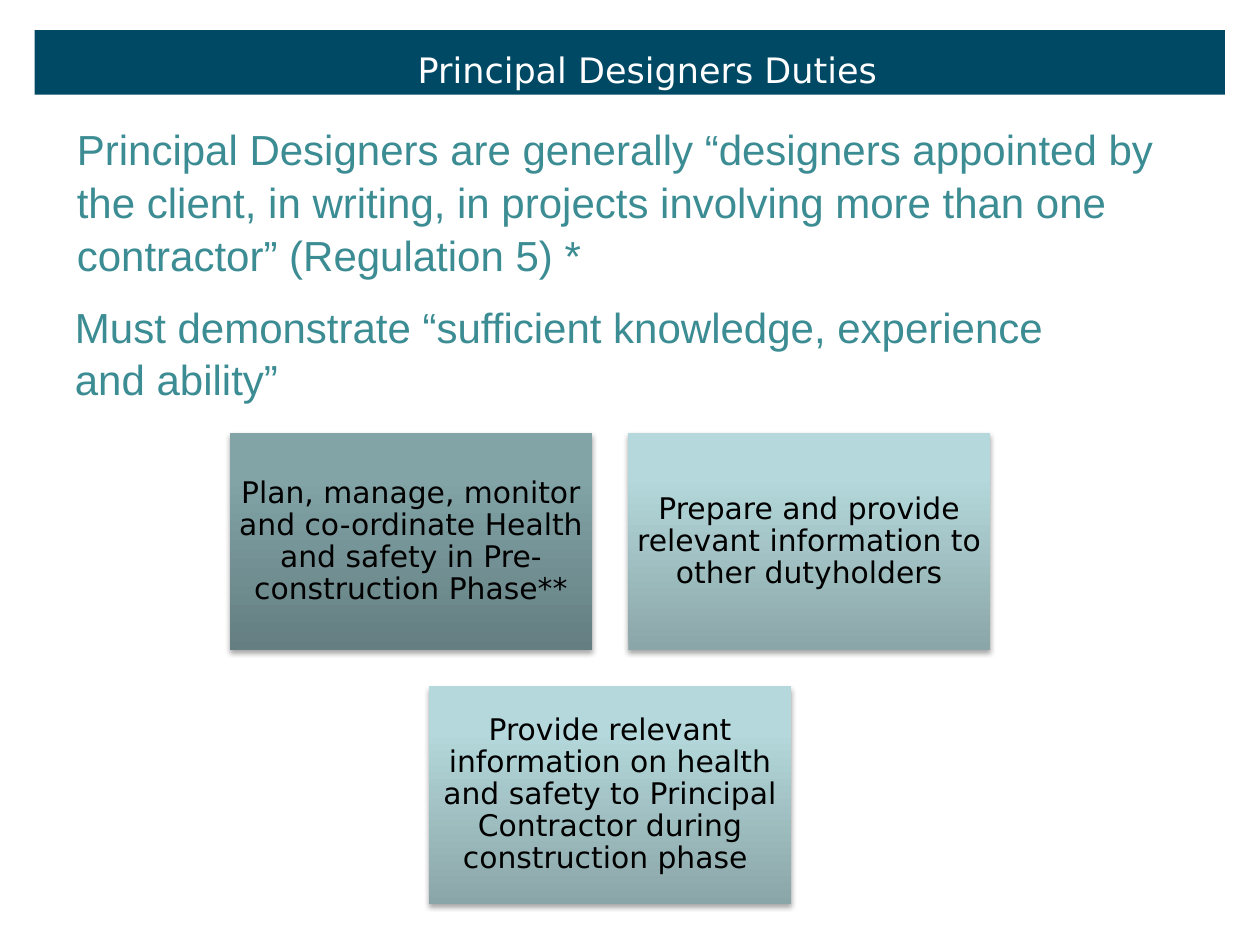
from lxml import etree
from pptx import Presentation
from pptx import util as u
from pptx.dml.color import RGBColor
from pptx.enum import shapes, text
from pptx.oxml import parse_xml
from pptx.oxml.ns import nsdecls, qn

NAVY = RGBColor(0x00, 0x49, 0x64)
TEAL = RGBColor(0x3C, 0x8C, 0x93)
WHITE = RGBColor(0xFF, 0xFF, 0xFF)
BLACK = RGBColor(0x00, 0x00, 0x00)
DARK_SHADES = [RGBColor(0x64, 0x7E, 0x81), RGBColor(0x82, 0xA4, 0xA7), RGBColor(0x82, 0xA6, 0xA9)]
LIGHT_SHADES = [RGBColor(0x8B, 0xA6, 0xA8), RGBColor(0xB4, 0xD8, 0xDB), RGBColor(0xB4, 0xD9, 0xDC)]
STOPS = (0, 80, 100)

CARD_WIDTH, CARD_HEIGHT, CARD_GAP = 206.8, 124.1, 20.7
CARDS_LEFT, CARDS_TOP = 131.5, 247.5
CARD_ROWS = [
    [("Plan, manage, monitor and co-ordinate Health and safety in Pre-construction Phase**", DARK_SHADES),
     ("Prepare and provide relevant information to other dutyholders", LIGHT_SHADES)],
    [("Provide relevant information on health and safety to Principal Contractor "
      "during construction phase ", LIGHT_SHADES)],
]


def place(box, left, top, width, height):
    box.left, box.top, box.width, box.height = map(u.Pt, (left, top, width, height))


def write(box, words, face, size, color, align, anchor, spacing):
    frame = box.text_frame
    frame.text = words
    frame.word_wrap = True
    frame.auto_size = text.MSO_AUTO_SIZE.NONE
    frame.vertical_anchor = anchor
    para = frame.paragraphs[0]
    para.alignment = align
    para.line_spacing = spacing
    para.space_before = u.Pt(0)
    para.font.name = face
    para.font.size = u.Pt(size)
    para.font.color.rgb = color


def add_band(page):
    band = page.shapes.add_shape(shapes.MSO_SHAPE.RECTANGLE, *map(u.Pt, (19.8, 17.3, 680.2, 36.8)))
    band.shadow.inherit = False
    band.fill.solid()
    band.fill.fore_color.rgb = NAVY
    band.line.fill.background()
    page.shapes._spTree.insert(2, band._element)


def fill_title(page, words):
    title = page.shapes.title
    place(title, 127.4, 10.8, 485.3, 43.9)
    write(title, words, "DejaVu Sans", 20, WHITE, text.PP_ALIGN.CENTER, text.MSO_ANCHOR.BOTTOM, 0.75)


def fill_body(body, words, left, top, width, height):
    place(body, left, top, width, height)
    write(body, words, "Arial", 24, TEAL, text.PP_ALIGN.LEFT, text.MSO_ANCHOR.TOP, 1.05)
    properties = body.text_frame.paragraphs[0]._p.get_or_add_pPr()
    properties.set("marL", "0")
    properties.set("indent", "0")
    bullet = etree.Element(qn("a:buNone"))
    properties.find(qn("a:defRPr")).addprevious(bullet)


def shade(card, colors):
    stops = "".join(
        f'<a:gs pos="{stop * 1000}"><a:srgbClr val="{color}"/></a:gs>'
        for stop, color in zip(STOPS, colors))
    gradient = parse_xml(
        f'<a:gradFill {nsdecls("a")} rotWithShape="1"><a:gsLst>{stops}</a:gsLst>'
        '<a:lin ang="16200000" scaled="0"/></a:gradFill>')
    card._element.spPr.find(qn("a:prstGeom")).addnext(gradient)


def cast_shadow(card):
    card.shadow.inherit = False
    effects = card._element.spPr.find(qn("a:effectLst"))
    effects.append(parse_xml(
        f'<a:outerShdw {nsdecls("a")} blurRad="{u.Pt(3.1)}" dist="{u.Pt(1.8)}" dir="5400000" '
        'rotWithShape="0"><a:srgbClr val="000000"><a:alpha val="35000"/></a:srgbClr></a:outerShdw>'))


def add_card(page, left, top, words, colors):
    card = page.shapes.add_shape(
        shapes.MSO_SHAPE.RECTANGLE, *map(u.Pt, (left, top, CARD_WIDTH, CARD_HEIGHT)))
    card.line.fill.background()
    shade(card, colors)
    cast_shadow(card)
    frame = card.text_frame
    frame.margin_left = frame.margin_right = frame.margin_top = frame.margin_bottom = u.Pt(5)
    write(card, words, "DejaVu Sans", 17, BLACK, text.PP_ALIGN.CENTER, text.MSO_ANCHOR.MIDDLE, 0.9)


def add_cards(page):
    step = CARD_WIDTH + CARD_GAP
    columns = max(map(len, CARD_ROWS))
    for row, cards in enumerate(CARD_ROWS):
        left = CARDS_LEFT + (columns - len(cards)) * step / 2
        top = CARDS_TOP + row * (CARD_HEIGHT + CARD_GAP)
        for column, (words, colors) in enumerate(cards):
            add_card(page, left + column * step, top, words, colors)


def main():
    deck = Presentation()
    deck.slide_width, deck.slide_height = u.Pt(720), u.Pt(540)
    page = deck.slides.add_slide(deck.slide_layouts.get_by_name("Two Content"))
    add_band(page)
    fill_title(page, "Principal Designers Duties")
    fill_body(page.placeholders[1],
              "Principal Designers are generally “designers appointed by the client, in writing, "
              "in projects involving more than one contractor” (Regulation 5) *",
              36.7, 65.5, 663.8, 100.8)
    fill_body(page.placeholders[2],
              "Must demonstrate “sufficient knowledge, experience and ability”",
              35.6, 167, 577.4, 65.5)
    add_cards(page)
    deck.save("out.pptx")


if __name__ == "__main__":
    main()
